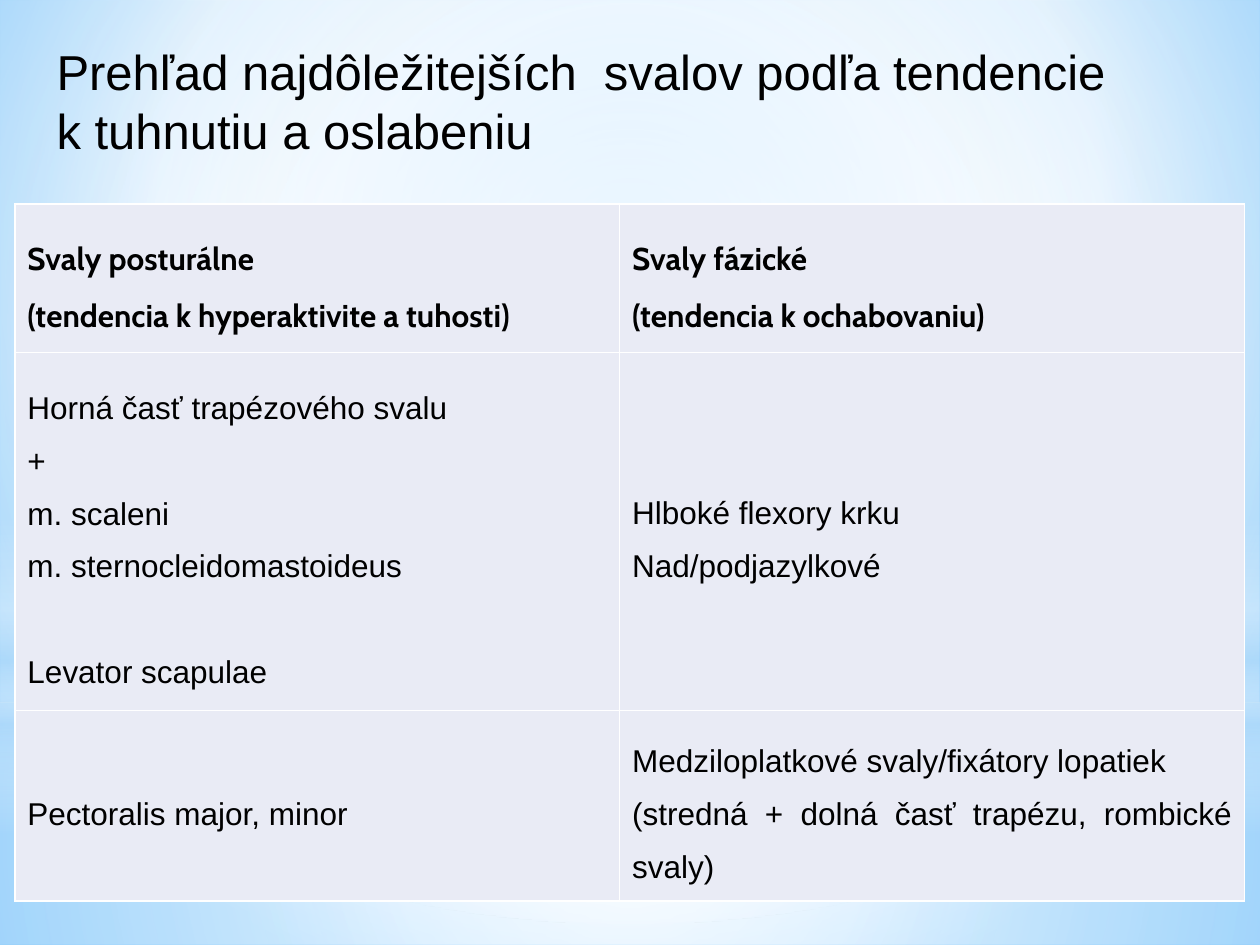
from dataclasses import dataclass

from lxml import etree
from pptx import Presentation
from pptx.dml.color import RGBColor
from pptx.enum.shapes import MSO_SHAPE
from pptx.enum.text import MSO_ANCHOR, PP_ALIGN
from pptx.oxml.ns import qn
from pptx.util import Cm, Pt

RECTANGLE, ELLIPSE = MSO_SHAPE.RECTANGLE, MSO_SHAPE.OVAL
TOP, MIDDLE = MSO_ANCHOR.TOP, MSO_ANCHOR.MIDDLE
LEFT, JUSTIFY = PP_ALIGN.LEFT, PP_ALIGN.JUSTIFY

COLORS = {
    "white": "FFFFFF",
    "mist": "B4DCFA",
    "sky": "9ED5FF",
    "blue": "5BB9FF",
    "cell": "E9EBF5",
    "text": "000000",
}
CENTER = (50, 50, 50, 50)
PAGE_WIDTH, PAGE_HEIGHT = 25.4, 19.05

TITLE_FONT = {"name": "Arial", "size": Pt(28), "bold": False}
HEADER_FONT = {"name": "Cabin", "size": Pt(18), "bold": True}
BODY_FONT = {"name": "Arial", "size": Pt(18), "bold": False}


@dataclass
class Gradient:
    stops: list[tuple[float, str, float]]  # position %, colour key, opacity %
    focus: tuple[int, int, int, int] | None = CENTER  # None: runs downwards


@dataclass
class Layer:
    preset: MSO_SHAPE
    top: float
    height: float
    gradient: Gradient


@dataclass
class Line:
    text: str
    space_before: float = 0


BACKGROUND = Gradient(
    [(0, "sky", 100), (60, "white", 100), (100, "blue", 100)], (20, 10, 20, 60))
LAYERS = [
    Layer(RECTANGLE, 14.17, 4.88, Gradient(
        [(0, "white", 91), (37, "white", 76), (100, "mist", 79)])),
    Layer(RECTANGLE, 0, 14.17, Gradient(
        [(0, "white", 89), (48, "white", 62), (100, "mist", 79)])),
    Layer(RECTANGLE, 10.46, 6.35, Gradient(
        [(0, "white", 0), (29, "white", 30), (45, "mist", 40),
         (55, "white", 26), (65, "mist", 60), (100, "white", 0)], None)),
    Layer(ELLIPSE, 4.45, 14.17, Gradient(
        [(0, "white", 100), (56, "white", 0)])),
]

TITLE = [
    Line("Prehľad najdôležitejších  svalov podľa tendencie"),
    Line("k tuhnutiu a oslabeniu"),
]
COLUMN_WIDTHS = [12.19, 12.6]
ROW_HEIGHTS = [3, 7.21, 3.84]
ROWS = [
    [
        [Line("Svaly posturálne"), Line("(tendencia k hyperaktivite a tuhosti)")],
        [Line("Svaly fázické"), Line("(tendencia k ochabovaniu)")],
    ],
    [
        [Line("Horná časť trapézového svalu"), Line("+"), Line("m. scaleni"),
         Line("m. sternocleidomastoideus"), Line("Levator scapulae", 30)],
        [Line("Hlboké flexory krku"), Line("Nad/podjazylkové")],
    ],
    [
        [Line("Pectoralis major, minor")],
        [Line("Medziloplatkové svaly/fixátory lopatiek"),
         Line("(stredná + dolná časť trapézu, rombické svaly)")],
    ],
]


def add_node(parent, tag: str, **attributes):
    values = {key: str(value) for key, value in attributes.items()}
    return etree.SubElement(parent, qn(tag), values)


def set_gradient(node, gradient: Gradient) -> None:
    """Replace the default content of a gradient fill."""
    for child in list(node):
        node.remove(child)
    stop_list = add_node(node, "a:gsLst")
    for position, color, opacity in gradient.stops:
        stop = add_node(stop_list, "a:gs", pos=position * 1000)
        shade = add_node(stop, "a:srgbClr", val=COLORS[color])
        if opacity < 100:
            add_node(shade, "a:alpha", val=opacity * 1000)
    if gradient.focus is None:
        add_node(node, "a:lin", ang=90 * 60000, scaled=0)
    else:
        route = add_node(node, "a:path", path="circle")
        sides = {side: share * 1000 for side, share in zip("ltrb", gradient.focus)}
        add_node(route, "a:fillToRect", **sides)


def add_layer(page, layer: Layer) -> None:
    shape = page.shapes.add_shape(
        layer.preset, 0, Cm(layer.top), Cm(PAGE_WIDTH), Cm(layer.height))
    shape.shadow.inherit = False
    shape.line.fill.background()
    shape.fill.gradient()
    set_gradient(shape.element.spPr.find(qn("a:gradFill")), layer.gradient)


def write_lines(frame, lines: list[Line], font: dict, align, spacing: float) -> None:
    for index, line in enumerate(lines):
        para = frame.add_paragraph() if index else frame.paragraphs[0]
        para.alignment = align
        para.line_spacing = spacing
        para.space_before = Pt(line.space_before)
        span = para.add_run()
        span.text = line.text
        for name, value in font.items():
            setattr(span.font, name, value)
        span.font.color.rgb = RGBColor.from_string(COLORS["text"])


def set_borders(cell, color: str, width: float) -> None:
    """Borders must stand before the fill in the cell properties."""
    properties = cell.fill._xPr
    for index, side in enumerate("LRTB"):
        border = add_node(properties, f"a:ln{side}", w=Pt(width))
        add_node(add_node(border, "a:solidFill"), "a:srgbClr", val=COLORS[color])
        properties.insert(index, border)


def add_muscle_table(page) -> None:
    table = page.shapes.add_table(
        len(ROWS), len(COLUMN_WIDTHS), Cm(0.3), Cm(4.11),
        Cm(sum(COLUMN_WIDTHS)), Cm(sum(ROW_HEIGHTS))).table
    table.first_row = table.horz_banding = False
    for column, width in zip(table.columns, COLUMN_WIDTHS):
        column.width = Cm(width)
    for row_index, (row, height) in enumerate(zip(ROWS, ROW_HEIGHTS)):
        table.rows[row_index].height = Cm(height)
        font = BODY_FONT if row_index else HEADER_FONT
        for column_index, lines in enumerate(row):
            cell = table.cell(row_index, column_index)
            cell.vertical_anchor = MIDDLE
            cell.fill.solid()
            cell.fill.fore_color.rgb = RGBColor.from_string(COLORS["cell"])
            set_borders(cell, "white", 1)
            write_lines(cell.text_frame, lines, font, JUSTIFY, 1.5)


def add_title(page) -> None:
    box = page.shapes.add_textbox(Cm(0.89), Cm(0.71), Cm(29.69), Cm(5.74))
    box.text_frame.word_wrap = True
    box.text_frame.vertical_anchor = TOP
    write_lines(box.text_frame, TITLE, TITLE_FONT, LEFT, 1.0)


def main() -> None:
    deck = Presentation()
    deck.slide_width, deck.slide_height = Cm(PAGE_WIDTH), Cm(PAGE_HEIGHT)
    page = deck.slides.add_slide(deck.slide_layouts[6])

    # Sky background with soft light layers
    page.background.fill.gradient()
    set_gradient(page.element.xpath(".//p:bgPr/a:gradFill")[0], BACKGROUND)
    for layer in LAYERS:
        add_layer(page, layer)

    # Content
    add_muscle_table(page)
    add_title(page)
    deck.save("out.pptx")


if __name__ == "__main__":
    main()
